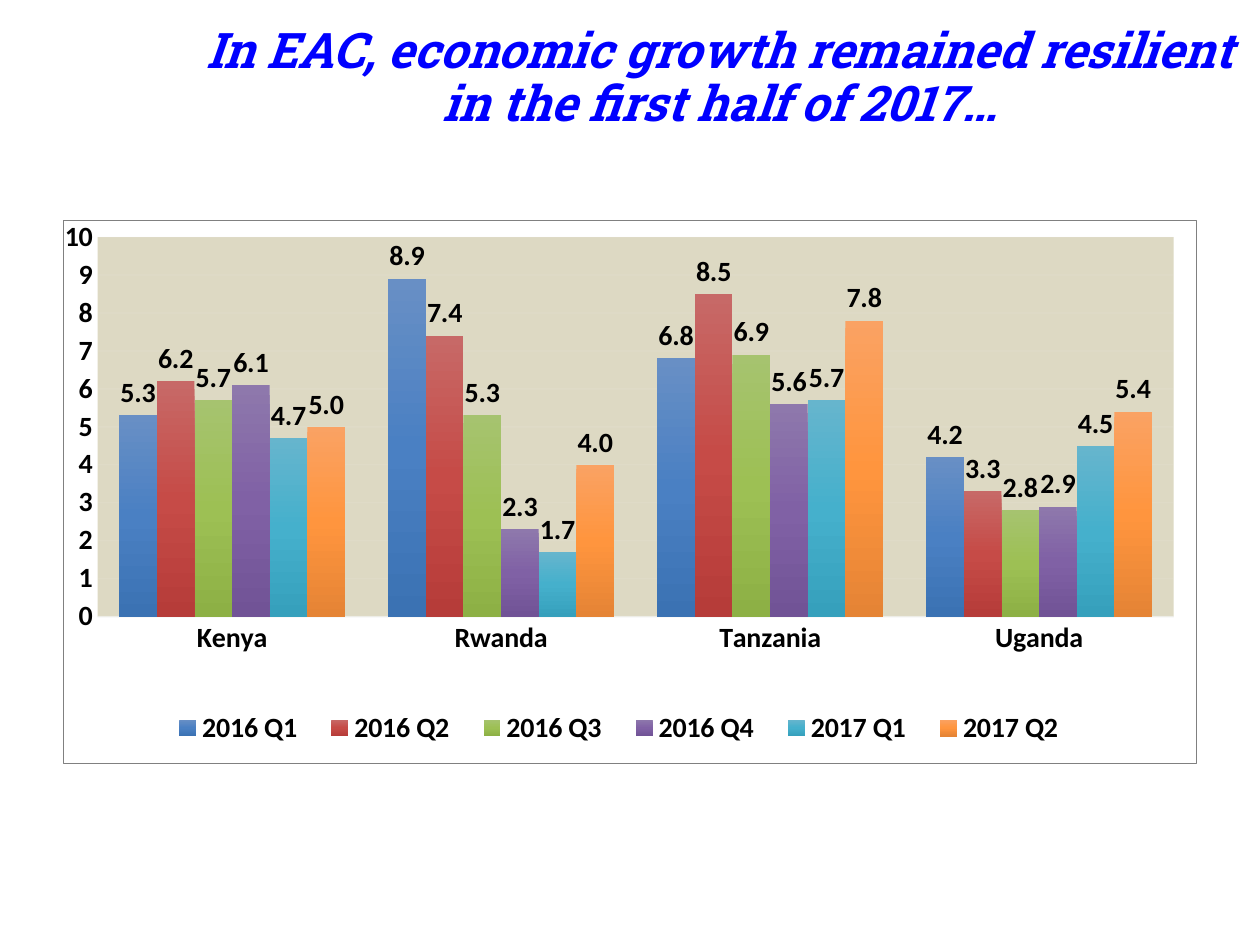
"""Build a slide charting quarterly economic growth in four EAC countries."""
from dataclasses import dataclass

from lxml import etree
from pptx import Presentation
from pptx.chart.data import CategoryChartData
from pptx.dml.color import RGBColor
from pptx.enum.chart import XL_CHART_TYPE, XL_LABEL_POSITION, XL_LEGEND_POSITION, XL_TICK_MARK
from pptx.enum.text import MSO_ANCHOR, PP_ALIGN
from pptx.oxml import parse_xml
from pptx.oxml.ns import nsdecls, qn
from pptx.util import Emu, Pt

CLUSTERED = XL_CHART_TYPE.COLUMN_CLUSTERED
OUTSIDE_END = XL_LABEL_POSITION.OUTSIDE_END
BOTTOM = XL_LEGEND_POSITION.BOTTOM
NO_TICK = XL_TICK_MARK.NONE
MIDDLE = MSO_ANCHOR.MIDDLE
CENTER = PP_ALIGN.CENTER

EMU_PER_PX = 914400 / 126
COLORS = {
    "title": "0000FF",
    "text": "000000",
    "plot": "DDD9C3",
    "border": "808080",
    "axis": "F2F2F2",
}
TITLE_FONT = {"name": "Roboto Slab", "size": Pt(28), "bold": True, "italic": True}
CHART_FONT = {"name": "Calibri", "size": Pt(16), "bold": True}
COUNTRIES = ("Kenya", "Rwanda", "Tanzania", "Uganda")


@dataclass(frozen=True)
class Quarter:
    name: str
    growth: tuple[float, ...]
    shades: tuple[str, str, str]


QUARTERS = (
    Quarter("2016 Q1", (5.3, 8.9, 6.8, 4.2), ("688FC5", "4A80C3", "3B72B3")),
    Quarter("2016 Q2", (6.2, 7.4, 8.5, 3.3), ("C76967", "C64B47", "B63C39")),
    Quarter("2016 Q3", (5.7, 5.3, 6.9, 2.8), ("A6C36F", "9DC054", "8DB045")),
    Quarter("2016 Q4", (6.1, 2.3, 5.6, 2.9), ("8E78AC", "8061A5", "715396")),
    Quarter("2017 Q1", (4.7, 1.7, 5.7, 4.5), ("66B5CD", "45B0CC", "36A0BC")),
    Quarter("2017 Q2", (5.0, 4.0, 7.8, 5.4), ("FAA263", "FF953E", "E58435")),
)


def px(length: int) -> Emu:
    return Emu(round(length * EMU_PER_PX))


def style_font(font, values: dict, color: str) -> None:
    for attribute, value in values.items():
        setattr(font, attribute, value)
    font.color.rgb = RGBColor.from_string(COLORS[color])


def style_line(line, width: float, opacity: int) -> None:
    line.width = Pt(width)
    line.color.rgb = RGBColor.from_string(COLORS["axis"])
    tint = line.fill._xPr.find(".//" + qn("a:srgbClr"))
    etree.SubElement(tint, qn("a:alpha"), val=str(opacity * 1000))


def place_part(part, index: int, x: float, y: float, w: float, h: float, target: str = "") -> None:
    for existing in part.findall(qn("c:layout")):
        part.remove(existing)
    inner = f'<c:layoutTarget val="{target}"/>' if target else ""
    part.insert(index, parse_xml(
        f'<c:layout {nsdecls("c")}><c:manualLayout>{inner}'
        '<c:xMode val="edge"/><c:yMode val="edge"/>'
        f'<c:x val="{x}"/><c:y val="{y}"/><c:w val="{w}"/><c:h val="{h}"/>'
        '</c:manualLayout></c:layout>'))


def solid_fill(color: str) -> str:
    return f'<a:solidFill><a:srgbClr val="{COLORS[color]}"/></a:solidFill>'


def shape_properties(content: str):
    return parse_xml(f'<c:spPr {nsdecls("c", "a")}>{content}</c:spPr>')


def style_series(series, quarter: Quarter) -> None:
    fill = series.format.fill
    fill.gradient()
    fill.gradient_angle = 270
    stops = series._element.find(".//" + qn("a:gsLst"))
    for stop in list(stops):
        stops.remove(stop)
    for position, shade in zip((0, 50000, 100000), quarter.shades):
        stop = etree.SubElement(stops, qn("a:gs"), pos=str(position))
        etree.SubElement(stop, qn("a:srgbClr"), val=shade)
    series.invert_if_negative = False
    labels = series.data_labels
    style_font(labels.font, CHART_FONT, "text")
    settings = {"show_value": True, "position": OUTSIDE_END,
                "number_format": "0.0", "number_format_is_linked": False}
    for attribute, value in settings.items():
        setattr(labels, attribute, value)


def style_axes(chart) -> None:
    countries, growth = chart.category_axis, chart.value_axis
    for axis in (countries, growth):
        axis.major_tick_mark = axis.minor_tick_mark = NO_TICK
        style_font(axis.tick_labels.font, CHART_FONT, "text")
    style_line(countries.format.line, 1, 54)
    growth.format.line.fill.background()
    growth.minimum_scale, growth.maximum_scale, growth.major_unit = 0, 10, 1
    style_line(growth.major_gridlines.format.line, 0.75, 10)


def add_title(slide) -> None:
    title = slide.shapes.title
    title.left, title.top, title.width, title.height = map(px, (179, 0, 1081, 158))
    title.text_frame.vertical_anchor = MIDDLE
    sentence = title.text_frame.paragraphs[0]
    sentence.text = "In EAC, economic growth remained resilient in the first half of 2017…"
    sentence.alignment = CENTER
    sentence.line_spacing = 0.9
    style_font(sentence.runs[0].font, TITLE_FONT, "title")


def add_growth_chart(slide) -> None:
    growth = CategoryChartData(number_format="0.0")
    growth.categories = COUNTRIES
    for quarter in QUARTERS:
        growth.add_series(quarter.name, quarter.growth)
    chart = slide.shapes.add_chart(CLUSTERED, *map(px, (63, 220, 1134, 544)), growth).chart
    style_font(chart.font, CHART_FONT, "text")
    chart.has_title = False
    columns = chart.plots[0]
    columns.gap_width, columns.overlap, columns.vary_by_categories = 115, 0, False
    for series, quarter in zip(columns.series, QUARTERS):
        style_series(series, quarter)
    style_axes(chart)
    chart.value_axis.tick_labels.number_format = "0"
    chart.value_axis.tick_labels.number_format_is_linked = False

    chart.has_legend = True
    legend = chart.legend
    legend.position = BOTTOM
    legend.include_in_layout = False
    style_font(legend.font, CHART_FONT, "text")
    place_part(legend._element, 1, 0.08, 0.89, 0.82, 0.09)

    chart_space = chart._chartSpace
    plot_area = chart_space.find(".//" + qn("c:plotArea"))
    place_part(plot_area, 0, 0.03, 0.03, 0.95, 0.7, "inner")
    plot_area.append(shape_properties(solid_fill("plot")))
    border = f'<a:noFill/><a:ln w="{Pt(0.75)}">{solid_fill("border")}</a:ln>'
    chart_space.find(qn("c:txPr")).addprevious(shape_properties(border))


def main() -> None:
    deck = Presentation()
    deck.slide_width, deck.slide_height = px(1260), px(945)
    slide = deck.slides.add_slide(deck.slide_layouts[5])
    add_title(slide)
    add_growth_chart(slide)
    deck.save("out.pptx")


if __name__ == "__main__":
    main()
